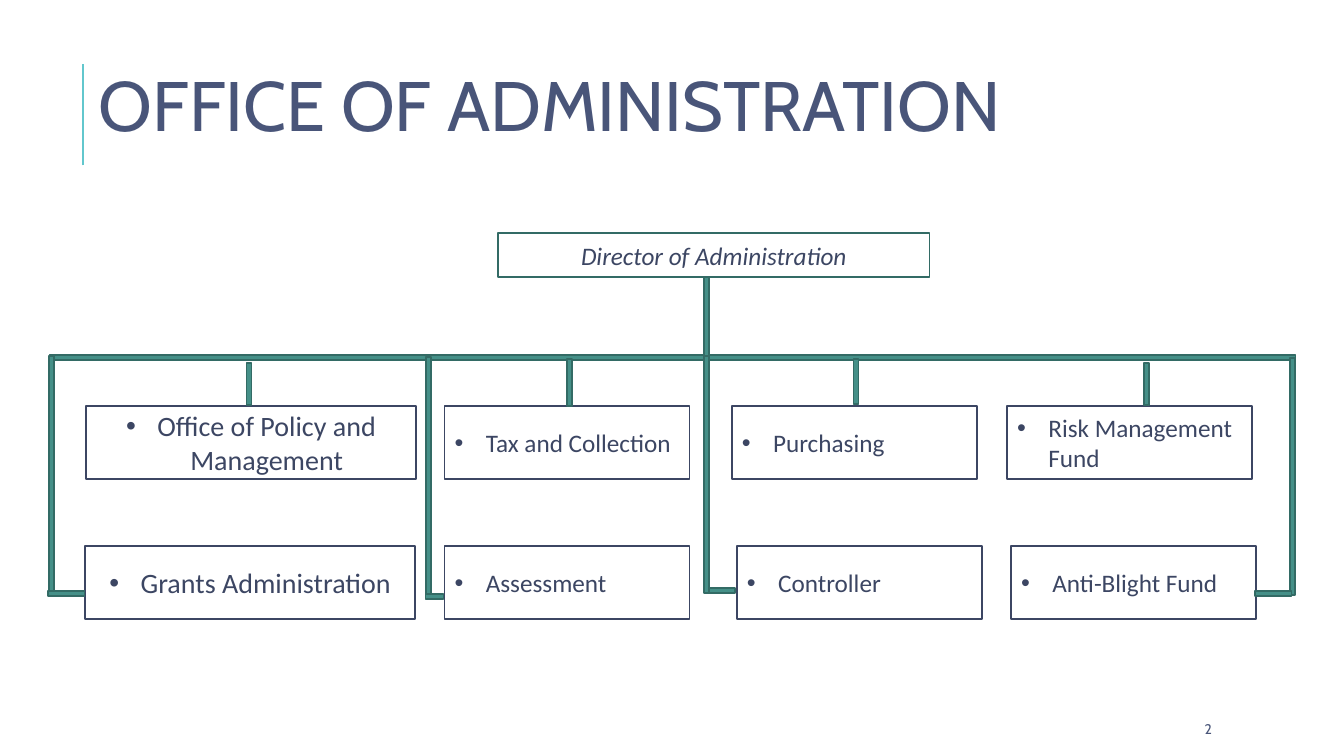
from lxml import etree
from pptx import Presentation
from pptx.dml.color import RGBColor
from pptx.enum.shapes import MSO_CONNECTOR, MSO_SHAPE
from pptx.enum.text import MSO_ANCHOR, PP_ALIGN
from pptx.oxml.ns import qn
from pptx.util import Inches, Pt

RECTANGLE = MSO_SHAPE.RECTANGLE
STRAIGHT = MSO_CONNECTOR.STRAIGHT
MIDDLE = MSO_ANCHOR.MIDDLE
LEFT, CENTER = PP_ALIGN.LEFT, PP_ALIGN.CENTER

WHITE, NAVY, SLATE = "FFFFFF", "3C4663", "495579"
TEAL, DARK_TEAL, AQUA = "459088", "336B65", "62C7CD"
HEADING_FONT, BODY_FONT = "Cabin", "Calibri"
BAR_WIDTH = 0.05
DROP_HEIGHT = 2.35
BOX_HEIGHT = 0.72
BULLET_INDENT = 0.31
UPPER_TOP, LOWER_TOP = 4.03, 5.42

# name, left, top, width, size, alignment
OFFICES = [
    ("Office of Policy and Management", 0.85, UPPER_TOP, 3.28, 20, CENTER),
    ("Tax and Collection", 4.41, UPPER_TOP, 2.43, 18, LEFT),
    ("Purchasing", 7.26, UPPER_TOP, 2.43, 18, LEFT),
    ("Risk Management Fund", 9.99, UPPER_TOP, 2.43, 18, LEFT),
    ("Grants Administration", 0.84, LOWER_TOP, 3.28, 20, CENTER),
    ("Assessment", 4.41, LOWER_TOP, 2.43, 18, LEFT),
    ("Controller", 7.31, LOWER_TOP, 2.43, 18, LEFT),
    ("Anti-Blight Fund", 10.03, LOWER_TOP, 2.43, 18, LEFT),
]
STUBS = [(2.47, 3.6, 0.42), (5.65, 3.56, 0.47), (8.49, 3.56, 0.45), (11.37, 3.6, 0.42)]
DROPS = [(0.51, 3.53), (4.25, 3.54), (7.01, 3.53), (12.82, 3.55)]
FEET = [(0.48, 5.86, 0.36), (4.22, 5.89, 0.18), (7.03, 5.83, 0.26), (12.45, 5.86, 0.36)]


def color(value):
    return RGBColor.from_string(value)


def add_bullet(paragraph):
    properties = paragraph._p.get_or_add_pPr()
    properties.set("marL", str(Inches(BULLET_INDENT)))
    properties.set("indent", str(Inches(-BULLET_INDENT)))
    etree.SubElement(properties, qn("a:buFont")).set("typeface", "Arial")
    etree.SubElement(properties, qn("a:buChar")).set("char", "•")


def write_text(shape, text, size=18, font=BODY_FONT, text_color=NAVY, align=LEFT,
               italic=False, bullet=False, line_spacing=None):
    frame = shape.text_frame
    frame.word_wrap = True
    frame.vertical_anchor = MIDDLE
    paragraph = frame.paragraphs[0]
    paragraph.alignment = align
    if line_spacing:
        paragraph.line_spacing = line_spacing
    if bullet:
        add_bullet(paragraph)
    run = paragraph.add_run()
    run.text = text
    run.font.size = Pt(size)
    run.font.name = font
    run.font.italic = italic
    run.font.color.rgb = color(text_color)


def add_label(slide, text, left, top, width, height, **text_format):
    label = slide.shapes.add_textbox(Inches(left), Inches(top), Inches(width), Inches(height))
    write_text(label, text, font=HEADING_FONT, text_color=SLATE, **text_format)


def add_rectangle(slide, left, top, width, height, fill, line):
    shape = slide.shapes.add_shape(
        RECTANGLE, Inches(left), Inches(top), Inches(width), Inches(height))
    shape.shadow.inherit = False
    shape.fill.solid()
    shape.fill.fore_color.rgb = color(fill)
    shape.line.color.rgb = color(line)
    shape.line.width = Pt(1.25)
    return shape


def add_horizontal_bar(slide, left, top, length):
    add_rectangle(slide, left, top, length, BAR_WIDTH, TEAL, DARK_TEAL)


def add_vertical_bar(slide, center, top, length):
    add_rectangle(slide, center - BAR_WIDTH / 2, top, BAR_WIDTH, length, TEAL, DARK_TEAL)


def add_title_rule(slide):
    rule = slide.shapes.add_connector(
        STRAIGHT, Inches(0.82), Inches(1.64), Inches(0.82), Inches(0.64))
    rule.line.color.rgb = color(AQUA)
    rule.line.width = Pt(1.5)
    etree.SubElement(rule._element.spPr, qn("a:effectLst"))


def main():
    presentation = Presentation()
    presentation.slide_width = Inches(13.33)
    presentation.slide_height = Inches(7.5)
    slide = presentation.slides.add_slide(presentation.slide_layouts[6])

    add_title_rule(slide)
    add_label(slide, "OFFICE OF ADMINISTRATION", 0.88, 0.28, 10.63, 1.64,
              size=50, line_spacing=0.8)
    add_label(slide, "2", 11.85, 7.08, 1.06, 0.3, size=10)

    director = add_rectangle(slide, 4.94, 2.31, 4.28, 0.44, WHITE, DARK_TEAL)
    write_text(director, "Director of Administration", align=CENTER, italic=True)
    for name, left, top, width, size, align in OFFICES:
        office = add_rectangle(slide, left, top, width, BOX_HEIGHT, WHITE, NAVY)
        write_text(office, name, size=size, align=align, bullet=True)

    add_horizontal_bar(slide, 0.49, 3.52, 12.36)
    add_vertical_bar(slide, 7.01, 2.75, 0.84)
    for center, top, length in STUBS:
        add_vertical_bar(slide, center, top, length)
    for center, top in DROPS:
        add_vertical_bar(slide, center, top, DROP_HEIGHT)
    for left, top, length in FEET:
        add_horizontal_bar(slide, left, top, length)

    presentation.save("out.pptx")


if __name__ == "__main__":
    main()
